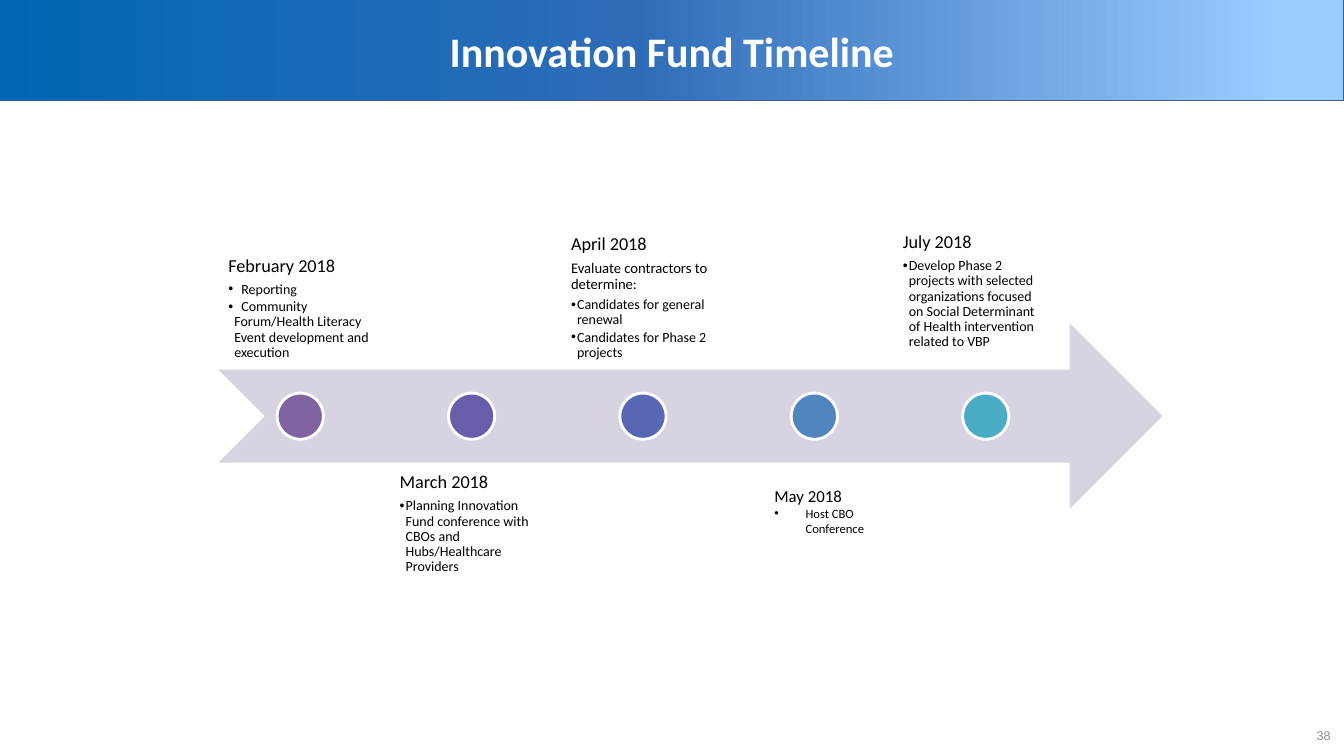
from lxml.etree import SubElement
from pptx import Presentation
from pptx.dml.color import RGBColor
from pptx.enum.shapes import MSO_SHAPE
from pptx.enum.text import MSO_ANCHOR, PP_ALIGN
from pptx.oxml.ns import qn
from pptx.util import Inches, Pt

COLORS = {
    "white": "FFFFFF", "black": "000000", "gray": "8C8C8C",
    "edge": "3A5F8C", "arrow": "D8D3E0",
    "deep": "0067B4", "mid": "2E6CB8", "sky": "99CCFF",
    "feb": "8064A2", "mar": "685DAB", "apr": "5767B4",
    "may": "5185BD", "jul": "4BACC6",
}
FORMATS = {
    "title": {"size": Pt(30), "bold": True, "name": "Calibri"},
    "month": {"size": Pt(13), "name": "Calibri"},
    "lead": {"size": Pt(10.5), "name": "Calibri"},
    "item": {"size": Pt(10), "name": "Calibri"},
    "note_month": {"size": Pt(12), "name": "Calibri"},
    "note_item": {"size": Pt(9), "name": "Calibri"},
    "number": {"size": Pt(9), "name": "Arial"},
}
SPACING = {
    "month": {"line_spacing": 0.9, "space_after": Pt(4.5)},
    "lead": {"line_spacing": 0.9, "space_after": Pt(3.7)},
    "item": {"line_spacing": 0.9, "space_after": Pt(1.5), "level": 1},
}
HANGING = {"item": 0.06, "note_item": 0.31}
COLS, ROWS = 16, 9
PITCH = 2.04
ARROW_LEFT = 2.6
TEXT_W, TEXT_H = 1.94, 2.21
ABOVE, BELOW = 2.2, 5.51


class Deck:
    def __init__(self):
        self.prs = Presentation()
        self.prs.slide_width = Inches(13.33)
        self.prs.slide_height = Inches(7.5)
        self.slide = self.prs.slides.add_slide(self.prs.slide_layouts[6])

    def place(self, col, row, cols, rows):
        w = self.prs.slide_width / COLS
        h = self.prs.slide_height / ROWS
        return int(col * w), int(row * h), int(cols * w), int(rows * h)

    def color(self, name):
        return RGBColor.from_string(COLORS[name])

    def shape(self, kind, box, fill=None, line=None, width=1):
        s = self.slide.shapes.add_shape(kind, *self.place(*box))
        s.shadow.inherit = False
        if fill:
            s.fill.solid()
            s.fill.fore_color.rgb = self.color(fill)
        if line:
            s.line.color.rgb = self.color(line)
            s.line.width = Pt(width)
        else:
            s.line.fill.background()
        return s

    def gradient(self, s, stops):
        s.fill.gradient()
        s.fill.gradient_angle = 0
        gs_list = s._element.spPr.find(qn("a:gradFill")).find(qn("a:gsLst"))
        gs_list.clear()
        for percent, name in stops:
            gs = SubElement(gs_list, qn("a:gs"), pos=str(percent * 1000))
            SubElement(gs, qn("a:srgbClr"), val=COLORS[name])

    def bullet(self, p, indent, tab):
        pPr = p._p.get_or_add_pPr()
        pPr.set("marL", str(Inches(indent)))
        pPr.set("indent", str(-Inches(indent)))
        SubElement(pPr, qn("a:buFont"), typeface="Arial")
        SubElement(pPr, qn("a:buChar"), char="•")
        if tab:
            tabs = SubElement(pPr, qn("a:tabLst"))
            SubElement(tabs, qn("a:tab"), pos=str(Inches(tab)), algn="l")

    def fill_text(self, tf, paragraphs, color="black", align=PP_ALIGN.LEFT, tab=None):
        tf.word_wrap = True
        for i, (style, text) in enumerate(paragraphs):
            p = tf.paragraphs[0] if i == 0 else tf.add_paragraph()
            if style in HANGING:
                self.bullet(p, HANGING[style], tab)
            p.alignment = align
            for key, value in SPACING.get(style, {}).items():
                setattr(p, key, value)
            r = p.add_run()
            r.text = text
            for key, value in FORMATS[style].items():
                setattr(r.font, key, value)
            r.font.color.rgb = self.color(color)

    def text(self, box, paragraphs, anchor=MSO_ANCHOR.TOP, inset=0.05, **style):
        tf = self.slide.shapes.add_textbox(*self.place(*box)).text_frame
        tf.vertical_anchor = anchor
        tf.margin_top = tf.margin_bottom = Inches(inset)
        self.fill_text(tf, paragraphs, **style)

    def banner(self, title):
        s = self.shape(MSO_SHAPE.RECTANGLE, (0, 0, COLS, 1.2), line="edge", width=0.75)
        self.gradient(s, [(0, "deep"), (47, "mid"), (95, "sky")])
        s.text_frame.vertical_anchor = MSO_ANCHOR.MIDDLE
        self.fill_text(s.text_frame, [("title", title)], "white", PP_ALIGN.CENTER)

    def milestone(self, col, row, anchor, paragraphs, tab=None):
        self.text((col, row, TEXT_W, TEXT_H), paragraphs, anchor, 0.1, tab=tab)


def main():
    deck = Deck()
    deck.banner("Innovation Fund Timeline")
    deck.shape(MSO_SHAPE.NOTCHED_RIGHT_ARROW, (ARROW_LEFT, 3.85, 11.24, TEXT_H), "arrow")
    for i, month in enumerate(["feb", "mar", "apr", "may", "jul"]):
        deck.shape(MSO_SHAPE.OVAL, (3.3 + i * PITCH, 4.68, 0.55, 0.55), month, "white", 2)

    deck.milestone(ARROW_LEFT, ABOVE, MSO_ANCHOR.BOTTOM, [
        ("month", "February 2018"),
        ("item", "\tReporting"),
        ("item", "\tCommunity Forum/Health Literacy Event development and execution"),
    ], tab=0.13)
    deck.milestone(ARROW_LEFT + PITCH, BELOW, MSO_ANCHOR.TOP, [
        ("month", "March 2018"),
        ("item", "Planning Innovation Fund conference with CBOs and Hubs/Healthcare Providers"),
    ])
    deck.milestone(ARROW_LEFT + 2 * PITCH, ABOVE, MSO_ANCHOR.BOTTOM, [
        ("month", "April 2018"),
        ("lead", "Evaluate contractors to determine:"),
        ("item", "Candidates for general renewal"),
        ("item", "Candidates for Phase 2 projects"),
    ])
    deck.milestone(10.63, 2.65, MSO_ANCHOR.TOP, [
        ("month", "July 2018"),
        ("item", "Develop Phase 2 projects with selected organizations focused on "
                 "Social Determinant of Health intervention related to VBP"),
    ])
    deck.text((9.1, 5.72, 1.37, 0.73), [
        ("note_month", "May 2018"),
        ("note_item", "Host CBO Conference"),
    ])
    deck.text((12.23, 8.51, 3.73, 0.48), [("number", "38")], MSO_ANCHOR.MIDDLE,
              color="gray", align=PP_ALIGN.RIGHT)
    deck.prs.save("out.pptx")


if __name__ == "__main__":
    main()
